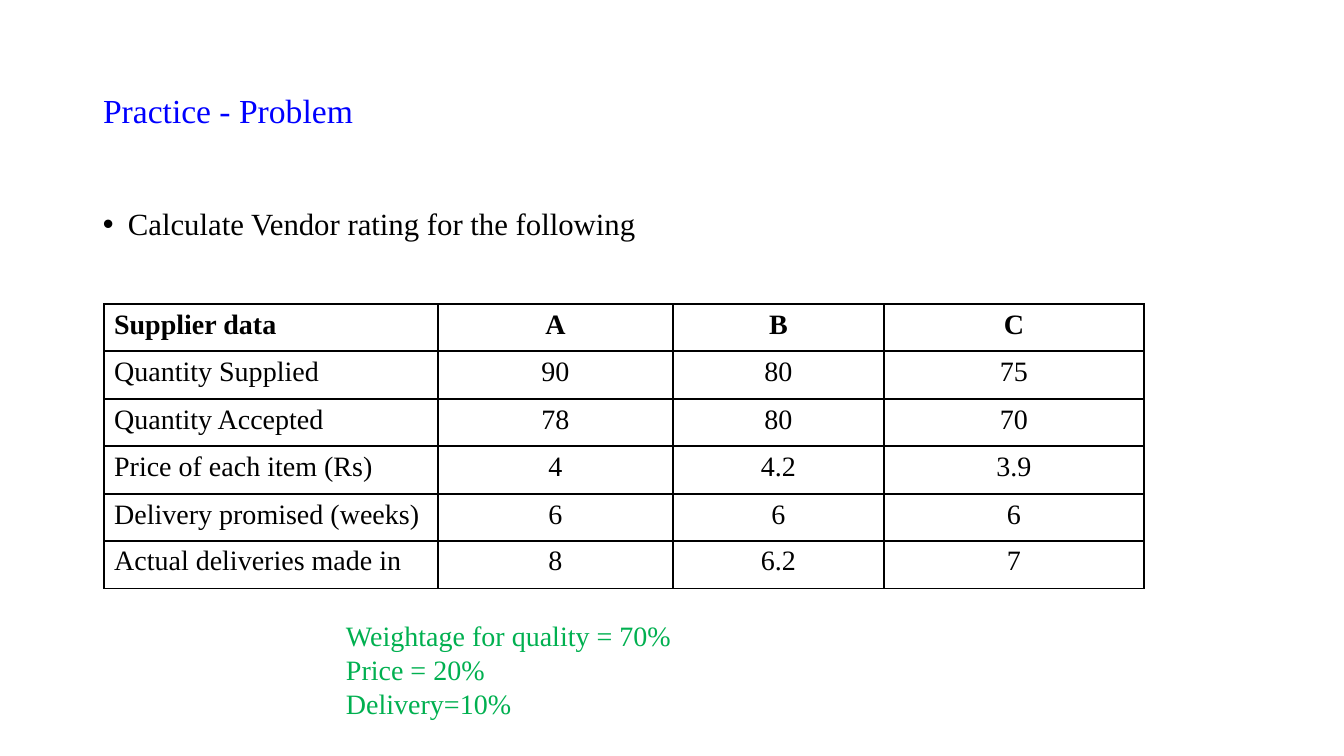
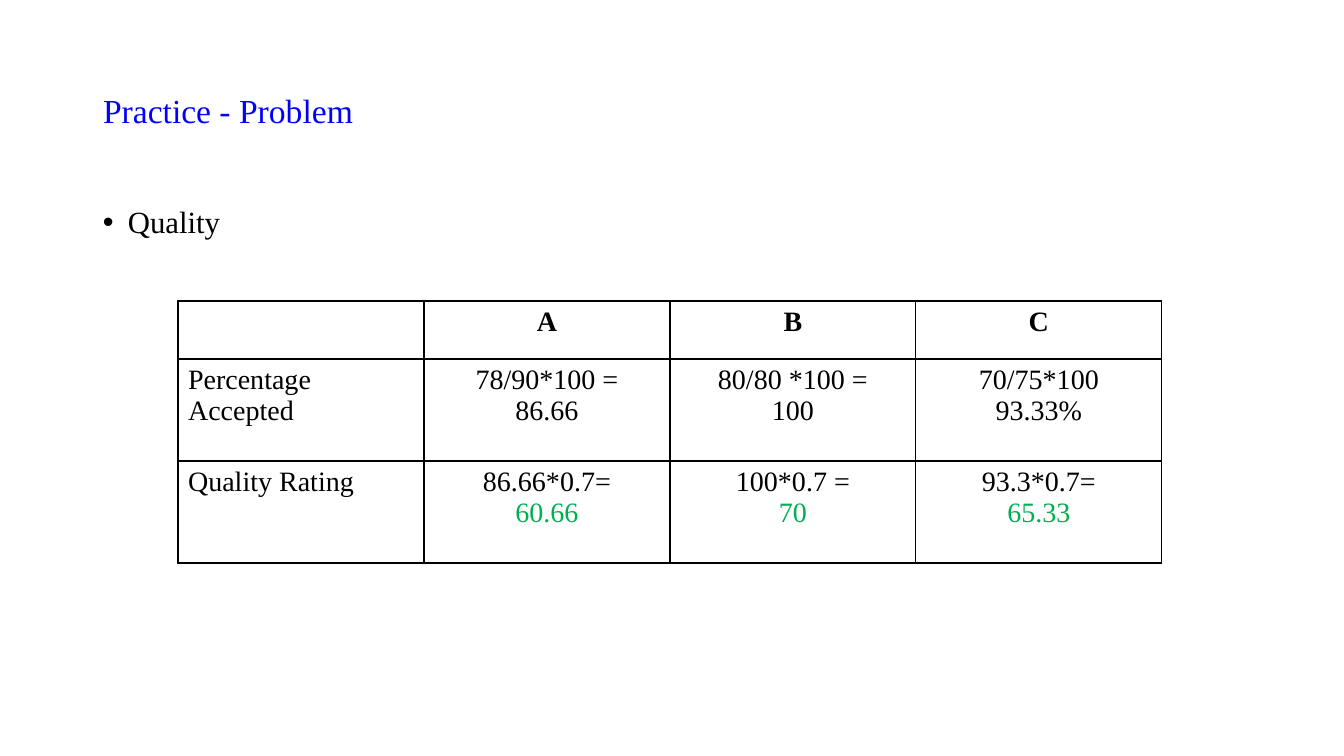
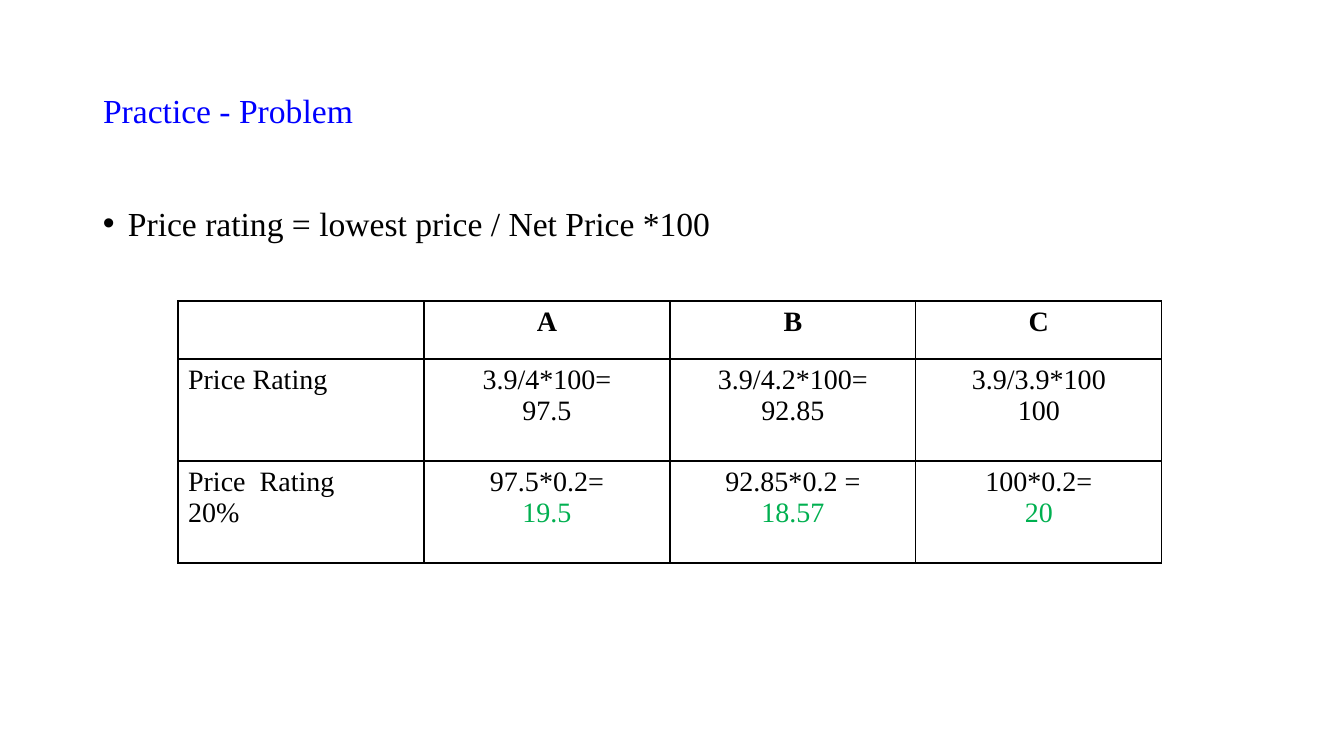
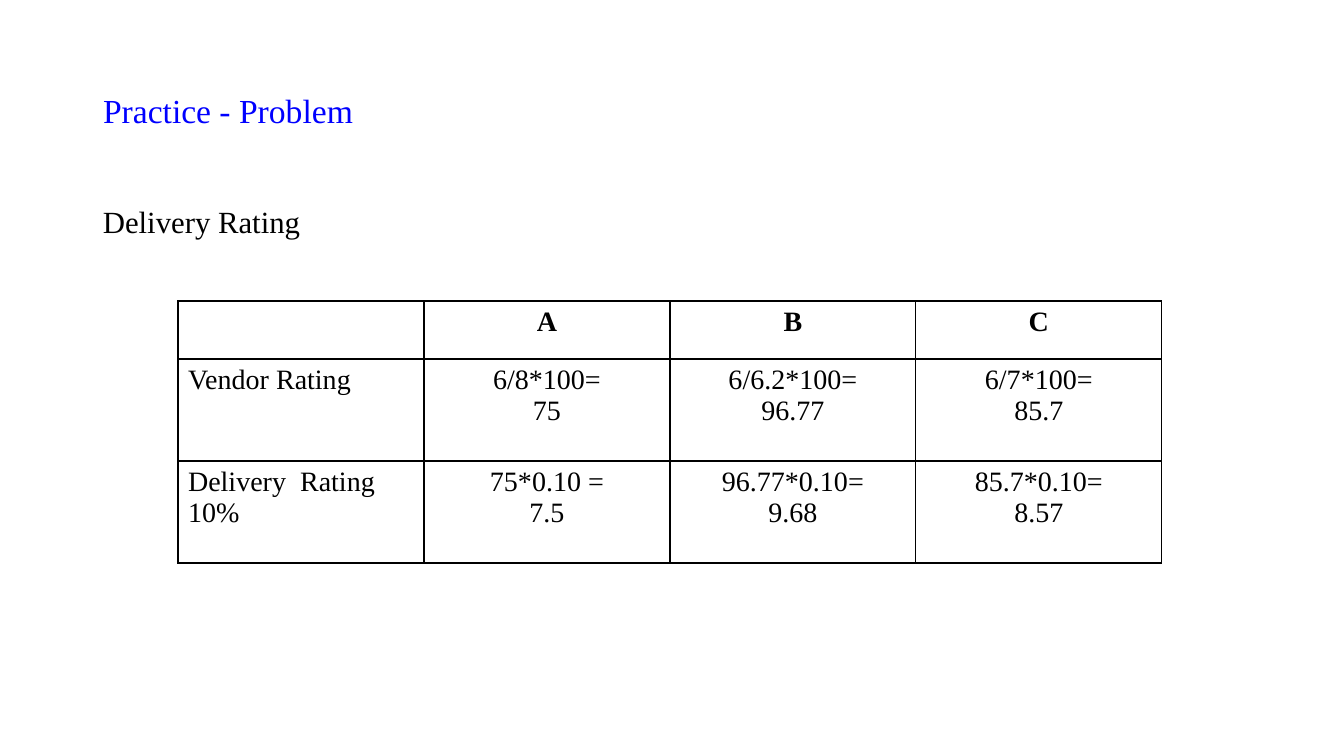
from dataclasses import dataclass

from pptx import Presentation
from pptx.dml.color import RGBColor
from pptx.enum.text import MSO_ANCHOR as Anchor, MSO_AUTO_SIZE as AutoSize, PP_ALIGN as Align
from pptx.oxml import parse_xml
from pptx.oxml.ns import nsdecls
from pptx.presentation import Presentation as Deck
from pptx.slide import Slide
from pptx.table import _Cell as Cell
from pptx.text.text import TextFrame, _Paragraph as Paragraph
from pptx.util import Emu, Pt

# Shared style
FONT = "Times New Roman"
BLACK = RGBColor(0x00, 0x00, 0x00)
WHITE = RGBColor(0xFF, 0xFF, 0xFF)
BLUE = RGBColor(0x00, 0x00, 0xFF)
GREEN = RGBColor(0x00, 0xB0, 0x50)

EMU_PER_PX = 914400 / 100.8
SLIDE_SIZE = (1344, 756)
TITLE = "Practice - Problem"
TITLE_BOX = (93, 40, 1159, 146)
BODY_LEFT, BODY_WIDTH, BODY_HEIGHT = 93, 1159, 480
BULLET_INDENT = 25
TABLE_SIZE = 20
LINE_SPACING = 0.9


@dataclass(frozen=True)
class Body:
    text: str
    top: int = 202
    size: int = 22
    bullet: bool = True


@dataclass(frozen=True)
class Grid:
    rows: tuple[tuple[str, ...], ...]
    left: int = 178
    top: int = 301
    widths: tuple[int, ...] = (246,) * 4
    heights: tuple[int, ...] = (58, 102, 102)
    green_results: bool = False


@dataclass(frozen=True)
class Page:
    body: Body
    grid: Grid
    note: str = ""


RATING_HEADER = ("", "A", "B", "C")

# Slide content
PAGES = (
    Page(
        Body("Calculate Vendor rating for the following", top=204),
        Grid(
            (
                ("Supplier data", "A", "B", "C"),
                ("Quantity Supplied", "90", "80", "75"),
                ("Quantity Accepted", "78", "80", "70"),
                ("Price of each item (Rs)", "4", "4.2", "3.9"),
                ("Delivery promised (weeks)", "6", "6", "6"),
                ("Actual deliveries made in", "8", "6.2", "7"),
            ),
            left=104,
            top=304,
            widths=(334, 235, 211, 260),
            heights=(47, 48) * 3,
        ),
        note="Weightage for quality = 70%\nPrice = 20%\nDelivery=10%",
    ),
    Page(
        Body("Quality"),
        Grid(
            (
                RATING_HEADER,
                ("Percentage Accepted", "78/90*100 =\n86.66", "80/80 *100 =\n100", "70/75*100\n93.33%"),
                ("Quality Rating", "86.66*0.7=\n60.66", "100*0.7 =\n70", "93.3*0.7=\n65.33"),
            ),
            green_results=True,
        ),
    ),
    Page(
        Body("Price rating = lowest price / Net Price *100", size=24),
        Grid(
            (
                RATING_HEADER,
                ("Price Rating", "3.9/4*100=\n97.5", "3.9/4.2*100=\n92.85", "3.9/3.9*100\n100"),
                ("Price  Rating\n20%", "97.5*0.2=\n19.5", "92.85*0.2 =\n18.57", "100*0.2=\n20"),
            ),
            green_results=True,
        ),
    ),
    Page(
        Body("Delivery Rating", bullet=False),
        Grid(
            (
                RATING_HEADER,
                ("Vendor Rating", "6/8*100=\n75", "6/6.2*100=\n96.77", "6/7*100=\n85.7"),
                ("Delivery  Rating\n10%", "75*0.10 =\n7.5", "96.77*0.10=\n9.68", "85.7*0.10=\n8.57"),
            ),
        ),
    ),
)


# Helpers
def px(length: int) -> Emu:
    return Emu(round(length * EMU_PER_PX))


def format_para(
    para: Paragraph, size: int, color: RGBColor = BLACK, bold: bool = False, align: Align = Align.LEFT
) -> None:
    para.alignment = align
    for span in para.runs:
        span.font.name = FONT
        span.font.size = Pt(size)
        span.font.bold = bold
        span.font.color.rgb = color


def add_text_box(slide: Slide, left: int, top: int, width: int, height: int, text: str) -> TextFrame:
    frame = slide.shapes.add_textbox(px(left), px(top), px(width), px(height)).text_frame
    frame.word_wrap = True
    frame.text = text
    return frame


def add_bullet(para: Paragraph) -> None:
    properties = para._p.get_or_add_pPr()
    indent = px(BULLET_INDENT)
    properties.set("marL", str(indent))
    properties.set("indent", str(-indent))
    properties.append(parse_xml(f'<a:buFont {nsdecls("a")} typeface="Arial"/>'))
    properties.append(parse_xml(f'<a:buChar {nsdecls("a")} char="•"/>'))


def style_cell(cell: Cell) -> None:
    cell.fill.solid()
    cell.fill.fore_color.rgb = WHITE
    properties = cell._tc.get_or_add_tcPr()
    for index, side in enumerate(("lnL", "lnR", "lnT", "lnB")):
        border = f'<a:{side} {nsdecls("a")} w="{Pt(1)}"><a:solidFill><a:srgbClr val="{BLACK}"/></a:solidFill></a:{side}>'
        properties.insert(index, parse_xml(border))


# Slide parts
def add_title(slide: Slide) -> None:
    title = slide.shapes.title
    title.left, title.top, title.width, title.height = map(px, TITLE_BOX)
    frame = title.text_frame
    frame.text = TITLE
    frame.auto_size = AutoSize.NONE
    frame.vertical_anchor = Anchor.MIDDLE
    para = frame.paragraphs[0]
    para.line_spacing = LINE_SPACING
    format_para(para, 24, BLUE)


def add_body(slide: Slide, body: Body) -> None:
    frame = add_text_box(slide, BODY_LEFT, body.top, BODY_WIDTH, BODY_HEIGHT, body.text)
    para = frame.paragraphs[0]
    para.line_spacing = LINE_SPACING
    para.space_before = Pt(10)
    format_para(para, body.size)
    if body.bullet:
        add_bullet(para)


def add_grid(slide: Slide, grid: Grid) -> None:
    table = slide.shapes.add_table(
        len(grid.heights), len(grid.widths),
        px(grid.left), px(grid.top), px(sum(grid.widths)), px(sum(grid.heights)),
    ).table
    table.first_row = table.horz_banding = False
    for column, width in zip(table.columns, grid.widths):
        column.width = px(width)
    for row, height in zip(table.rows, grid.heights):
        row.height = px(height)

    last_row = len(grid.rows) - 1
    for row_index, texts in enumerate(grid.rows):
        for column_index, text in enumerate(texts):
            cell = table.cell(row_index, column_index)
            style_cell(cell)
            cell.text_frame.text = text
            align = Align.CENTER if column_index else Align.LEFT
            paras = cell.text_frame.paragraphs
            for para in paras:
                format_para(para, TABLE_SIZE, bold=row_index == 0, align=align)
            if grid.green_results and row_index == last_row and column_index:
                format_para(paras[-1], TABLE_SIZE, GREEN, align=align)


def add_note(slide: Slide, text: str) -> None:
    frame = add_text_box(slide, 336, 614, 672, 112, text)
    frame.auto_size = AutoSize.SHAPE_TO_FIT_TEXT
    for para in frame.paragraphs:
        format_para(para, 20, GREEN)


def add_page(deck: Deck, page: Page) -> None:
    slide = deck.slides.add_slide(deck.slide_layouts.get_by_name("Title Only"))
    add_title(slide)
    add_body(slide, page.body)
    add_grid(slide, page.grid)
    if page.note:
        add_note(slide, page.note)


def main() -> None:
    deck = Presentation()
    deck.slide_width, deck.slide_height = map(px, SLIDE_SIZE)
    for page in PAGES:
        add_page(deck, page)
    deck.save("out.pptx")


if __name__ == "__main__":
    main()
